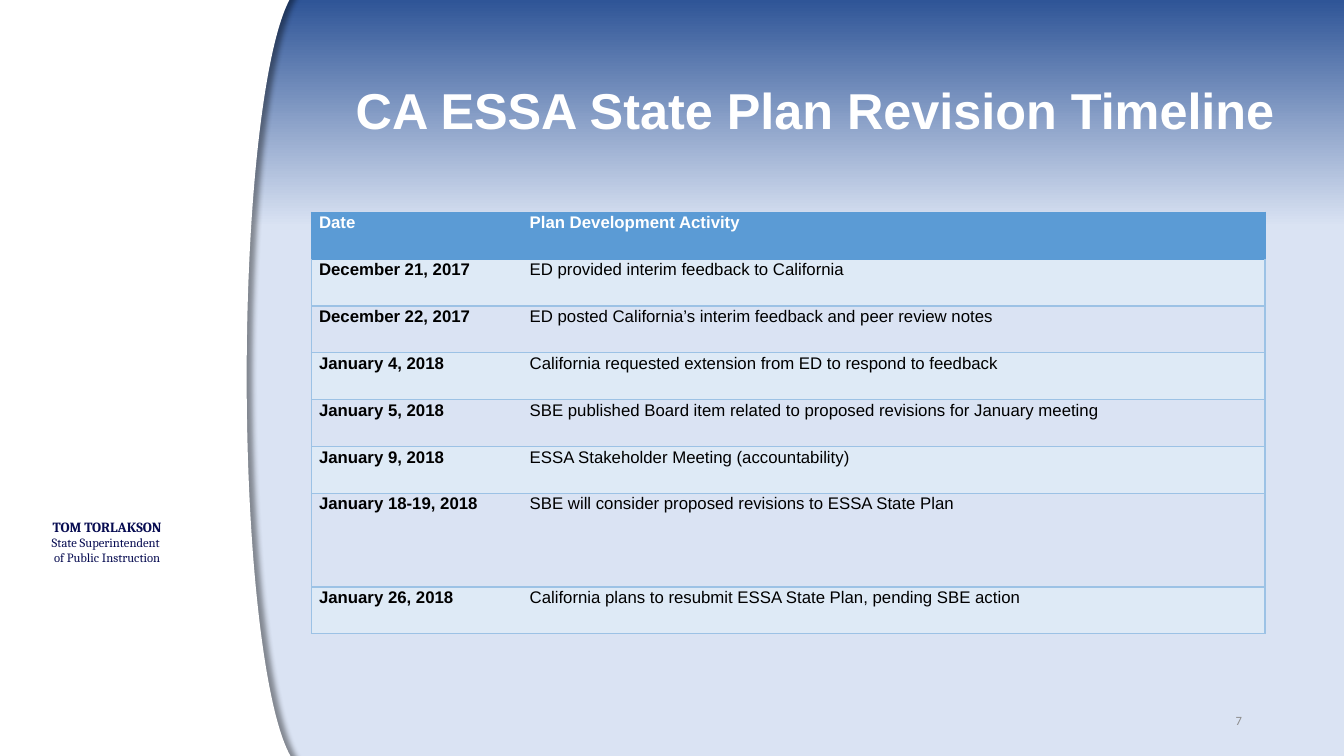
"""Build the state plan revision timeline slide."""
import lxml.etree
import pptx
import pptx.dml.color
import pptx.enum.shapes
import pptx.enum.text
import pptx.oxml
import pptx.oxml.ns
import pptx.util

Cm = pptx.util.Cm
Pt = pptx.util.Pt
RGBColor = pptx.dml.color.RGBColor
Align = pptx.enum.text.PP_ALIGN

WHITE = RGBColor(0xFF, 0xFF, 0xFF)
BLACK = RGBColor(0, 0, 0)
SKY_TOP = RGBColor(0x2F, 0x55, 0x97)
SKY_BASE = RGBColor(0xDA, 0xE3, 0xF3)
NAVY = RGBColor(0x07, 0x0C, 0x51)
GREY = RGBColor(0x8C, 0x8C, 0x8C)
HEADER_BLUE = RGBColor(0x5B, 0x9B, 0xD5)
RULE_BLUE = RGBColor(0x9C, 0xC2, 0xE5)
BAND_BLUE = RGBColor(0xDE, 0xEA, 0xF6)

ROW_HEIGHT = 1.18
TIMELINE = [
    ("Date", "Plan Development Activity"),
    ("December 21, 2017", "ED provided interim feedback to California"),
    ("December 22, 2017", "ED posted California’s interim feedback and peer review notes"),
    ("January 4, 2018", "California requested extension from ED to respond to feedback"),
    ("January 5, 2018", "SBE published Board item related to proposed revisions for January meeting"),
    ("January 9, 2018", "ESSA Stakeholder Meeting (accountability)"),
    ("January 18-19, 2018", "SBE will consider proposed revisions to ESSA State Plan"),
    ("January 26, 2018", "California plans to resubmit ESSA State Plan, pending SBE action"),
]
TALL_ROW = 6


class TimelineSlide:
    def __init__(self, presentation):
        self.slide = presentation.slides.add_slide(presentation.slide_layouts[6])

    def background(self, top, base, base_position):
        fill = self.slide.background.fill
        fill.gradient()
        fill.gradient_angle = 270
        for stop, color, position in zip(fill.gradient_stops, (top, base), (0, base_position)):
            stop.color.rgb = color
            stop.position = position

    def side_panel(self, left, top, width, height):
        shape = self.slide.shapes.add_shape(
            pptx.enum.shapes.MSO_SHAPE.FLOWCHART_STORED_DATA,
            Cm(left), Cm(top), Cm(width), Cm(height))
        shape.fill.solid()
        shape.fill.fore_color.rgb = WHITE
        shape.line.fill.background()
        shape.shadow.inherit = False
        effects = shape.element.spPr.find(pptx.oxml.ns.qn("a:effectLst"))
        effects.append(pptx.oxml.parse_xml(
            f'<a:outerShdw {pptx.oxml.ns.nsdecls("a")} blurRad="{Pt(4)}" dist="{Pt(3)}" '
            'dir="0" algn="l" rotWithShape="0"><a:srgbClr val="000000">'
            '<a:alpha val="40000"/></a:srgbClr></a:outerShdw>'))

    def run(self, paragraph, text, size, color, font="Arial", bold=False):
        run = paragraph.add_run()
        run.text = text
        run.font.name = font
        run.font.size = Pt(size)
        run.font.bold = bold
        run.font.color.rgb = color

    def text(self, box, lines, align, color, font, spacing=1.0):
        shape = self.slide.shapes.add_textbox(*(Cm(length) for length in box))
        frame = shape.text_frame
        frame.word_wrap = True
        frame.vertical_anchor = pptx.enum.text.MSO_ANCHOR.MIDDLE
        paragraph = frame.paragraphs[0]
        paragraph.alignment = align
        paragraph.line_spacing = spacing
        for index, (text, size, bold) in enumerate(lines):
            if index:
                paragraph.add_line_break()
            self.run(paragraph, text, size, color, font, bold)

    def borders(self, cell, colors):
        properties = cell._tc.get_or_add_tcPr()
        for side, color in zip("LRTB", colors):
            line = lxml.etree.SubElement(
                properties, pptx.oxml.ns.qn(f"a:ln{side}"), w=str(Pt(1)))
            if color is None:
                lxml.etree.SubElement(line, pptx.oxml.ns.qn("a:noFill"))
            else:
                fill = lxml.etree.SubElement(line, pptx.oxml.ns.qn("a:solidFill"))
                lxml.etree.SubElement(fill, pptx.oxml.ns.qn("a:srgbClr"), val=str(color))

    def cell(self, cell, text, row, column):
        header = row == 0
        rule = HEADER_BLUE if header else RULE_BLUE
        top = HEADER_BLUE if row <= 1 else RULE_BLUE
        sides = (None, rule) if column else (rule, None)
        self.borders(cell, (*sides, top, rule))
        if header or row % 2:
            cell.fill.solid()
            cell.fill.fore_color.rgb = HEADER_BLUE if header else BAND_BLUE
        else:
            cell.fill.background()
        cell.margin_left = cell.margin_right = Cm(0.19)
        cell.margin_top = cell.margin_bottom = 0
        paragraph = cell.text_frame.paragraphs[0]
        paragraph.line_spacing = 1.07
        self.run(paragraph, text, 12, WHITE if header else BLACK, bold=header or column == 0)

    def table(self, left, top, widths, rows):
        table = self.slide.shapes.add_table(
            len(rows), len(widths), Cm(left), Cm(top),
            Cm(sum(widths)), Cm(ROW_HEIGHT * (len(rows) + 1))).table
        table.first_row = True
        table.horz_banding = False
        for column, width in enumerate(widths):
            table.columns[column].width = Cm(width)
        for row, texts in enumerate(rows):
            table.rows[row].height = Cm(ROW_HEIGHT * (2 if row == TALL_ROW else 1))
            for column, text in enumerate(texts):
                self.cell(table.cell(row, column), text, row, column)


def main():
    presentation = pptx.Presentation()
    presentation.slide_width = Cm(33.87)
    presentation.slide_height = Cm(19.05)
    timeline = TimelineSlide(presentation)
    timeline.background(SKY_TOP, SKY_BASE, 0.3)
    timeline.side_panel(-1.2, -0.38, 8.9, 19.76)
    timeline.text((0.58, 12.7, 4.24, 1.9),
                  [("TOM TORLAKSON", 10, True),
                   ("State Superintendent ", 9, False),
                   ("of Public Instruction", 9, False)],
                  Align.CENTER, NAVY, "Cambria")
    timeline.text((8.08, 1.02, 24.94, 3.68),
                  [("CA ESSA State Plan Revision Timeline", 36, True)],
                  Align.CENTER, WHITE, "Arial", 0.9)
    timeline.text((23.93, 17.65, 7.62, 1.02), [("7", 9, False)],
                  Align.RIGHT, GREY, "Calibri")
    timeline.table(7.85, 5.35, (5.31, 18.72), TIMELINE)
    presentation.save("out.pptx")


if __name__ == "__main__":
    main()
